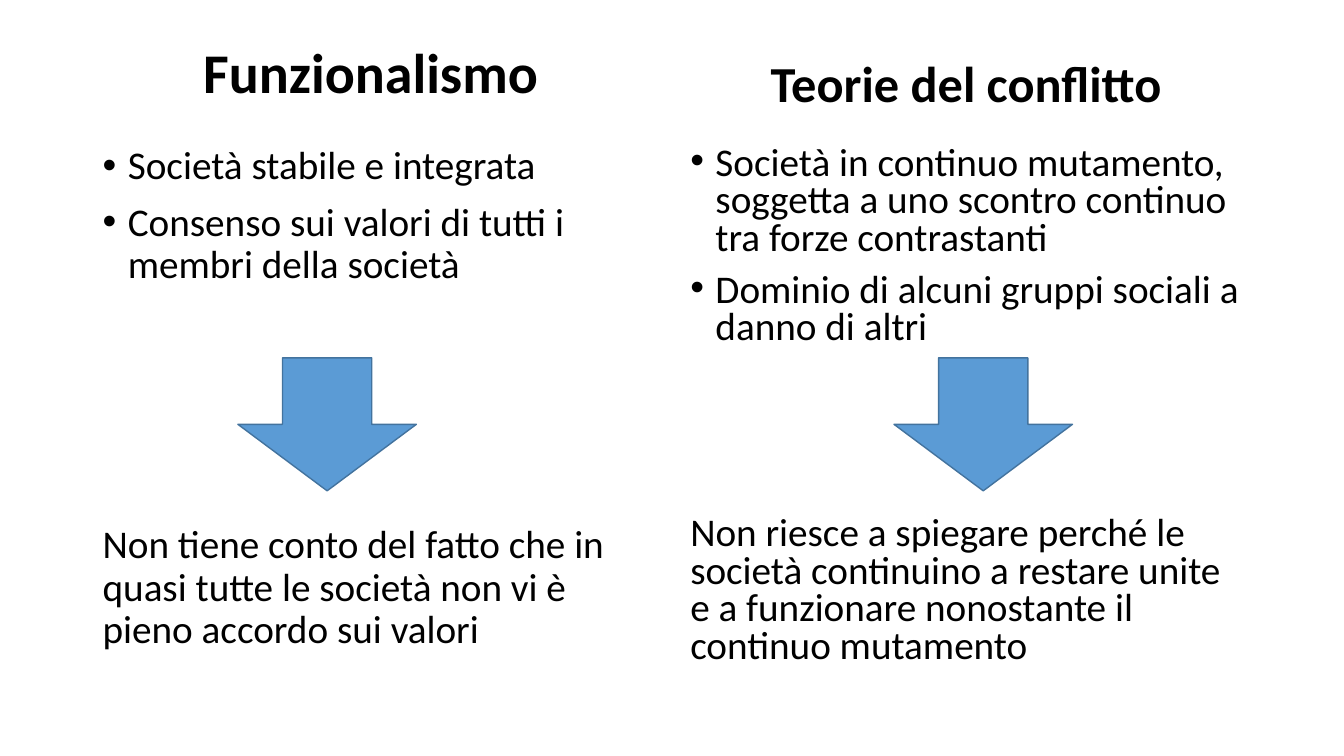
from lxml.etree import SubElement
from pptx import Presentation
from pptx.dml.color import RGBColor
from pptx.enum.shapes import MSO_SHAPE
from pptx.enum.text import MSO_ANCHOR, PP_ALIGN
from pptx.oxml.ns import qn
from pptx.util import Pt

COLORS = {"text": "000000", "arrow": "5B9BD5", "edge": "43739E"}
FONT = "Calibri"


def color(name):
    """Return the named colour."""
    return RGBColor.from_string(COLORS[name])


def frame(slide, left, top, width, height):
    """Add an empty wrapping text box and return its frame."""
    box = slide.shapes.add_textbox(Pt(left), Pt(top), Pt(width), Pt(height))
    box.text_frame.word_wrap = True
    return box.text_frame


def write(para, text, size, line, gap=10, bold=False):
    """Fill a paragraph with one run."""
    para.line_spacing = line
    para.space_before = Pt(gap)
    run = para.add_run()
    run.text = text
    run.font.name = FONT
    run.font.size = Pt(size)
    run.font.bold = bold
    run.font.color.rgb = color("text")


def bullet(para):
    """Give a paragraph a round bullet with a hanging indent."""
    props = para._p.get_or_add_pPr()
    props.set("marL", str(Pt(18)))
    props.set("indent", str(Pt(-18)))
    SubElement(props, qn("a:buFont"), typeface="Arial")
    SubElement(props, qn("a:buChar"), char="•")


def title(slide, left, top, width, text, size, inset):
    """Place a centred heading at the foot of its box."""
    body = frame(slide, left, top, width, 64.8)
    body.vertical_anchor = MSO_ANCHOR.BOTTOM
    body.margin_bottom = Pt(inset)
    para = body.paragraphs[0]
    para.alignment = PP_ALIGN.CENTER
    write(para, text, size, 0.9, bold=True)


def points(slide, left, top, width, height, items, limit, line, gap):
    """Place the bulleted theses and, after a gap, the limit of the theory."""
    body = frame(slide, left, top, width, height)
    for num, item in enumerate(items):
        para = body.add_paragraph() if num else body.paragraphs[0]
        write(para, item, 28, line)
        bullet(para)
    write(body.add_paragraph(), limit, 28, line, gap)


def arrow(slide, left, top):
    """Place a down arrow."""
    shape = slide.shapes.add_shape(
        MSO_SHAPE.DOWN_ARROW, Pt(left), Pt(top), Pt(127.5), Pt(95))
    shape.shadow.inherit = False
    shape.fill.solid()
    shape.fill.fore_color.rgb = color("arrow")
    shape.line.color.rgb = color("edge")
    shape.line.width = Pt(1)


def column(slide, left, top, width, height, head, theses, shift):
    """Place one theory: heading, theses, arrow and limit."""
    title(slide, left, top + head[0], width, *head[1:])
    points(slide, left, top + 86.4, width, height - 86.4, *theses)
    arrow(slide, left + shift, top + 241.2)


def main():
    """Build the slide comparing the two theories."""
    deck = Presentation()
    deck.slide_width, deck.slide_height = Pt(960), Pt(540)
    slide = deck.slides.add_slide(deck.slide_layouts[6])
    column(
        slide, 66.24, 14.4, 406, 473,
        (0, "Funzionalismo ", 40, 3.6),
        (["Società stabile e integrata",
          "Consenso sui valori di tutti i membri della società"],
         "Non tiene conto del fatto che in quasi tutte le società "
         "non vi è pieno accordo sui valori", 0.9, 170),
        103.7)
    column(
        slide, 486, 14.4, 408.24, 490.3,
        (6.5, "Teorie del conflitto", 36, 5),
        (["Società in continuo mutamento, soggetta a uno scontro continuo "
          "tra forze contrastanti",
          "Dominio di alcuni gruppi sociali a danno di altri"],
         "Non riesce a spiegare perché le società continuino a restare unite "
         "e a funzionare nonostante il continuo mutamento", 0.8, 120),
        152.6)
    deck.save("out.pptx")


if __name__ == "__main__":
    main()
